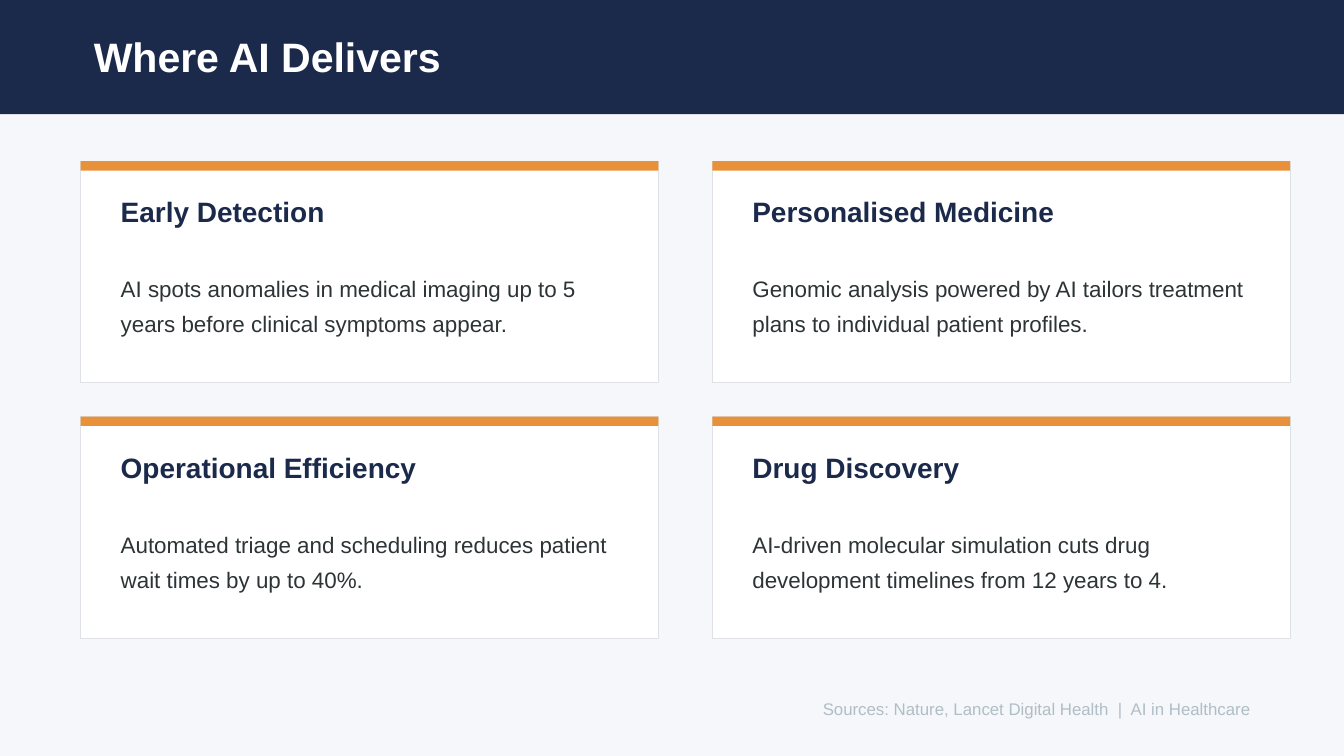
from pptx import Presentation
from pptx.dml.color import RGBColor
from pptx.enum.shapes import MSO_SHAPE
from pptx.enum.text import MSO_ANCHOR, PP_ALIGN
from pptx.util import Inches, Pt

COLORS = {
    "page": "F5F7FA",
    "navy": "1B2A4A",
    "white": "FFFFFF",
    "border": "DEE2E6",
    "accent": "E8913A",
    "body": "2D3436",
    "footer": "B0BEC5",
}
CARDS = [
    ("Early Detection",
     "AI spots anomalies in medical imaging up to 5 years before clinical symptoms appear."),
    ("Personalised Medicine",
     "Genomic analysis powered by AI tailors treatment plans to individual patient profiles."),
    ("Operational Efficiency",
     "Automated triage and scheduling reduces patient wait times by up to 40%."),
    ("Drug Discovery",
     "AI-driven molecular simulation cuts drug development timelines from 12 years to 4."),
]

deck = Presentation()
deck.slide_width = Inches(10)
deck.slide_height = Inches(10 * 9 / 16)
slide = deck.slides.add_slide(deck.slide_layouts[6])
slide.background.fill.solid()
slide.background.fill.fore_color.rgb = RGBColor.from_string(COLORS["page"])


def add_rect(left, top, width, height, fill, line=None):
    rect = slide.shapes.add_shape(
        MSO_SHAPE.RECTANGLE, Inches(left), Inches(top), Inches(width), Inches(height))
    rect.shadow.inherit = False
    rect.fill.solid()
    rect.fill.fore_color.rgb = RGBColor.from_string(COLORS[fill])
    if line:
        rect.line.color.rgb = RGBColor.from_string(COLORS[line])
        rect.line.width = Pt(0.5)
    else:
        rect.line.fill.background()


def add_text(text, left, top, width, height, size, color,
             bold=False, align=PP_ALIGN.LEFT, space=None):
    box = slide.shapes.add_textbox(
        Inches(left), Inches(top), Inches(width), Inches(height))
    frame = box.text_frame
    frame.word_wrap = True
    frame.vertical_anchor = MSO_ANCHOR.MIDDLE
    para = frame.paragraphs[0]
    para.alignment = align
    para.line_spacing = space
    run = para.add_run()
    run.text = text
    run.font.name = "Arial"
    run.font.size = Pt(size)
    run.font.bold = bold
    run.font.color.rgb = RGBColor.from_string(COLORS[color])


add_rect(0, 0, 10, 0.85, fill="navy")
add_text("Where AI Delivers", 0.6, 0.12, 8.8, 0.6, size=22, color="white", bold=True)

for index, (title, body) in enumerate(CARDS):
    row, col = divmod(index, 2)
    left = 0.6 + col * 4.7
    top = 1.2 + row * 1.9
    add_rect(left, top, 4.3, 1.65, fill="white", line="border")
    add_rect(left, top, 4.3, 0.07, fill="accent")
    add_text(title, left + 0.2, top + 0.2, 3.9, 0.35, size=15, color="navy", bold=True)
    add_text(body, left + 0.2, top + 0.6, 3.9, 0.9, size=12, color="body", space=1.3)

add_text("Sources: Nature, Lancet Digital Health  |  AI in Healthcare",
         0.6, 5.15, 8.8, 0.25, size=9, color="footer", align=PP_ALIGN.RIGHT)

deck.save("out.pptx")
